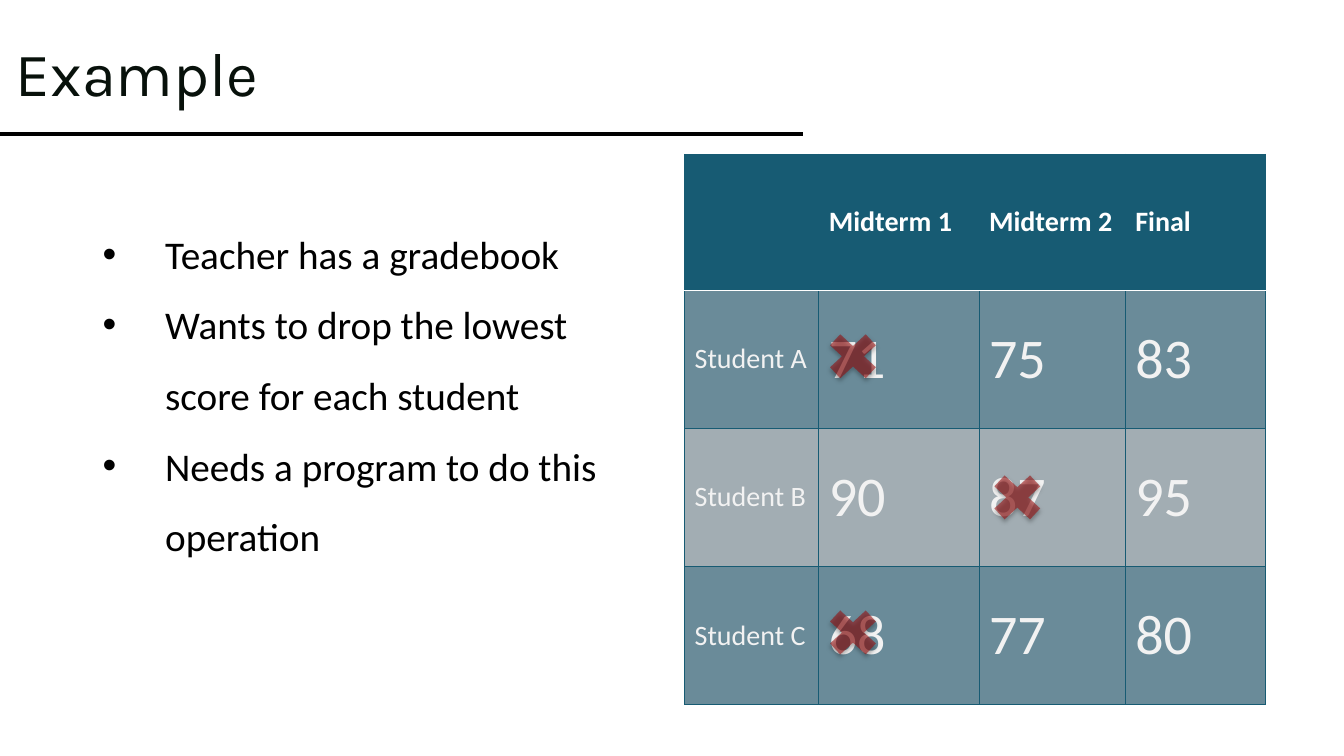
from lxml.etree import SubElement
from pptx import Presentation
from pptx.dml.color import RGBColor
from pptx.enum.shapes import MSO_CONNECTOR, MSO_SHAPE
from pptx.enum.text import MSO_ANCHOR
from pptx.oxml import parse_xml
from pptx.oxml.ns import nsdecls, qn
from pptx.util import Inches, Pt

COLORS = {
    "ink": "000000",
    "title": "08110B",
    "teal": "175B73",
    "teal_row": "6A8B99",
    "gray_row": "A2ADB3",
    "white": "FFFFFF",
    "score": "F2F2F2",
    "cross": "9A0707",
}
BULLETS = [
    "Teacher has a gradebook",
    "Wants to drop the lowest score for each student",
    "Needs a program to do this operation",
]
GRADEBOOK = [
    ["", "Midterm 1", "Midterm 2", "Final"],
    ["Student A", "71", "75", "83"],
    ["Student B", "90", "87", "95"],
    ["Student C", "68", "77", "80"],
]
COLUMN_WIDTHS = [1.33, 1.59, 1.45, 1.39]
ROW_HEIGHTS = [1.35, 1.37, 1.37, 1.37]
DROPPED_SCORES = [(8.12, 3.22), (9.75, 4.62), (8.12, 5.96)]


def rgb(name):
    return RGBColor.from_string(COLORS[name])


def write(paragraph, text, color, **font_format):
    run = paragraph.add_run()
    run.text = text
    run.font.color.rgb = rgb(color)
    for name, value in font_format.items():
        setattr(run.font, name, value)


def add_text_frame(slide, left, top, width, height, anchor):
    box = slide.shapes.add_textbox(
        Inches(left), Inches(top), Inches(width), Inches(height))
    box.text_frame.word_wrap = True
    box.text_frame.vertical_anchor = anchor
    return box.text_frame


def add_title(slide):
    frame = add_text_frame(slide, 0.06, 0.03, 7.51, 1.45, MSO_ANCHOR.MIDDLE)
    paragraph = frame.paragraphs[0]
    paragraph.line_spacing = 0.9
    write(paragraph, "Example", "title", name="Karla", size=Pt(44))


def add_title_rule(slide):
    rule = slide.shapes.add_connector(
        MSO_CONNECTOR.STRAIGHT, 0, Inches(1.33), Inches(7.96), Inches(1.33))
    rule.line.color.rgb = rgb("ink")
    rule.line.width = Pt(2.25)
    SubElement(rule._element.spPr, qn("a:effectLst"))


def add_bullets(slide):
    frame = add_text_frame(slide, 0.92, 2, 5.67, 4.76, MSO_ANCHOR.TOP)
    for index, text in enumerate(BULLETS):
        paragraph = frame.add_paragraph() if index else frame.paragraphs[0]
        paragraph.line_spacing = 1.5
        properties = paragraph._p.get_or_add_pPr()
        properties.set("marL", str(Inches(0.62)))
        properties.set("indent", str(-Inches(0.62)))
        SubElement(properties, qn("a:buFont"), typeface="Arial")
        SubElement(properties, qn("a:buChar"), char="•")
        write(paragraph, text, "ink", name="Calibri", size=Pt(28))


def set_borders(cell, **side_formats):
    """Draw each side given as (color name, points)."""
    properties = cell._tc.get_or_add_tcPr()
    for index, side in enumerate("LRTB"):
        color, points = side_formats.get(side, ("teal", 0.75))
        properties.insert(index, parse_xml(
            f'<a:ln{side} {nsdecls("a")} w="{Pt(points)}"><a:solidFill>'
            f'<a:srgbClr val="{COLORS[color]}"/></a:solidFill></a:ln{side}>'))


def add_gradebook(slide):
    table = slide.shapes.add_table(
        len(ROW_HEIGHTS), len(COLUMN_WIDTHS), Inches(6.79), Inches(1.53),
        Inches(sum(COLUMN_WIDTHS)), Inches(sum(ROW_HEIGHTS))).table
    for column, width in zip(table.columns, COLUMN_WIDTHS):
        column.width = Inches(width)
    for row, height in zip(table.rows, ROW_HEIGHTS):
        row.height = Inches(height)

    header_edge = ("white", 0.85)
    for r, values in enumerate(GRADEBOOK):
        is_header = r == 0
        row_color = "teal" if is_header else ("gray_row", "teal_row")[r % 2]
        edges = {0: {"B": header_edge}, 1: {"T": header_edge}}.get(r, {})
        for c, text in enumerate(values):
            cell = table.cell(r, c)
            cell.vertical_anchor = MSO_ANCHOR.MIDDLE
            cell.fill.solid()
            cell.fill.fore_color.rgb = rgb(row_color)
            set_borders(cell, **edges)
            if text:
                write(cell.text_frame.paragraphs[0], text,
                      "white" if is_header else "score",
                      name="Calibri", bold=is_header,
                      size=Pt(20 if is_header or c == 0 else 40))


def add_cross(slide, left, top):
    cross = slide.shapes.add_shape(
        MSO_SHAPE.MATH_MULTIPLY,
        Inches(left), Inches(top), Inches(0.68), Inches(0.63))
    cross.fill.solid()
    cross.fill.fore_color.rgb = rgb("cross")
    cross.line.fill.background()
    properties = cross._element.spPr
    fill_color = properties.find(qn("a:solidFill")).find(qn("a:srgbClr"))
    SubElement(fill_color, qn("a:alpha"), val="54000")
    properties.append(parse_xml(
        f'<a:effectLst {nsdecls("a")}>'
        f'<a:outerShdw blurRad="{Pt(3)}" dist="{Pt(2)}" dir="5400000" '
        f'rotWithShape="0"><a:srgbClr val="{COLORS["ink"]}">'
        '<a:alpha val="50000"/></a:srgbClr></a:outerShdw></a:effectLst>'))


def main():
    presentation = Presentation()
    presentation.slide_width = Inches(13.33)
    presentation.slide_height = Inches(7.5)
    slide = presentation.slides.add_slide(presentation.slide_layouts[6])
    add_title_rule(slide)
    add_bullets(slide)
    add_title(slide)
    add_gradebook(slide)
    for left, top in DROPPED_SCORES:
        add_cross(slide, left, top)
    presentation.save("out.pptx")


if __name__ == "__main__":
    main()
